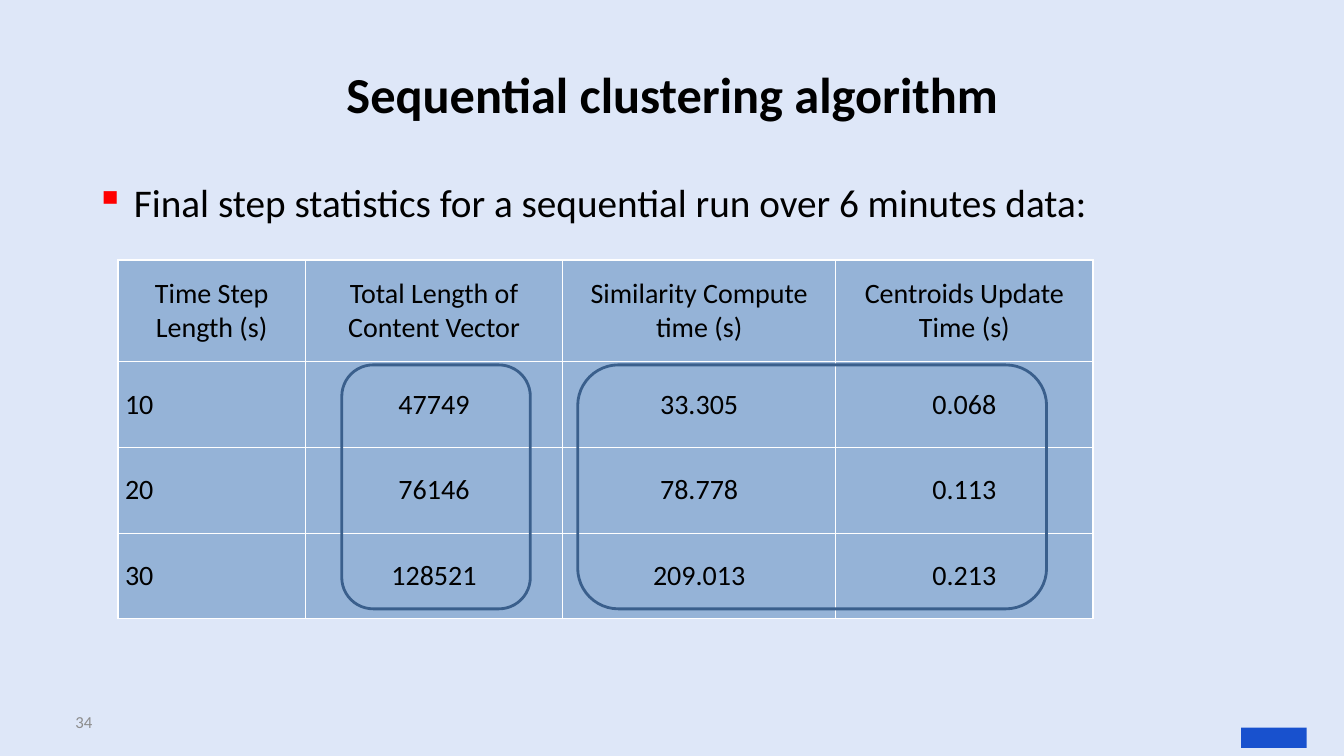
"""Build the slide with the statistics of the sequential clustering algorithm."""
from lxml import etree
from pptx import Presentation
from pptx.dml.color import RGBColor
from pptx.enum.shapes import MSO_SHAPE
from pptx.enum.text import MSO_ANCHOR, PP_ALIGN
from pptx.oxml.ns import qn
from pptx.util import Emu, Pt

CENTER, LEFT, JUSTIFY = PP_ALIGN.CENTER, PP_ALIGN.LEFT, PP_ALIGN.JUSTIFY
TOP, MIDDLE = MSO_ANCHOR.TOP, MSO_ANCHOR.MIDDLE
RECTANGLE, ROUNDED = MSO_SHAPE.RECTANGLE, MSO_SHAPE.ROUNDED_RECTANGLE
PX = 9144

THEME = {
    "font": "Calibri",
    "background": "DEE7F8", "ink": "000000", "muted": "8C8C8C",
    "bullet": "FF0000", "cell": "95B3D7", "grid": "FFFFFF",
    "highlight": "3A5F8C", "mark": "1851CE",
    "title_size": 36, "body_size": 28, "table_size": 20, "number_size": 12,
    "grid_width": 1, "highlight_width": 2,
}


def px(*lengths):
    return [Emu(length * PX) for length in lengths]


def write(frame, text, size, color="ink", align=LEFT, bold=False):
    paragraph = frame.paragraphs[0]
    paragraph.alignment = align
    run = paragraph.add_run()
    run.text = text
    font_format = {"name": THEME["font"], "size": Pt(THEME[size]), "bold": bold}
    for attribute, value in font_format.items():
        setattr(run.font, attribute, value)
    run.font.color.rgb = RGBColor.from_string(THEME[color])
    return paragraph


presentation = Presentation()
presentation.slide_width, presentation.slide_height = px(1333, 750)
slide = presentation.slides.add_slide(presentation.slide_layouts[6])
slide.background.fill.solid()
slide.background.fill.fore_color.rgb = RGBColor.from_string(THEME["background"])

corner_mark = slide.shapes.add_shape(RECTANGLE, *px(1231, 722, 65, 20))
corner_mark.shadow.inherit = False
corner_mark.fill.solid()
corner_mark.fill.fore_color.rgb = RGBColor.from_string(THEME["mark"])
corner_mark.line.fill.background()

TEXTS = [
    ((67, 30, 1200, 125), MIDDLE, "Sequential clustering algorithm",
     {"size": "title_size", "align": CENTER, "bold": True}),
    ((65, 696, 311, 40), MIDDLE, "34", {"size": "number_size", "color": "muted"}),
    ((85, 172, 1150, 65), TOP,
     "Final step statistics for a sequential run over 6 minutes data:",
     {"size": "body_size"}),
]
for place, anchor, text, text_format in TEXTS:
    frame = slide.shapes.add_textbox(*px(*place)).text_frame
    frame.word_wrap = True
    frame.vertical_anchor = anchor
    statement = write(frame, text, **text_format)

statement.space_after = Pt(6)
bullet_properties = statement._p.get_or_add_pPr()
bullet_properties.set("marL", str(38 * PX))
bullet_properties.set("indent", str(-38 * PX))
bullet_color = etree.SubElement(bullet_properties, qn("a:buClr"))
etree.SubElement(bullet_color, qn("a:srgbClr"), val=THEME["bullet"])
etree.SubElement(bullet_properties, qn("a:buChar"), char="▪")

STATISTICS = [
    ("Time Step Length (s)", "Total Length of Content Vector",
     "Similarity Compute time (s)", "Centroids Update Time (s)"),
    ("10", "47749", "33.305", "0.068"),
    ("20", "76146", "78.778", "0.113"),
    ("30", "128521", "209.013", "0.213"),
]
COLUMN_WIDTHS = (186, 255, 271, 255)
ROW_HEIGHTS = (101, 85, 85, 85)

statistics_table = slide.shapes.add_table(
    len(ROW_HEIGHTS), len(COLUMN_WIDTHS),
    *px(117, 258, sum(COLUMN_WIDTHS), sum(ROW_HEIGHTS))).table
for column, width in zip(statistics_table.columns, px(*COLUMN_WIDTHS)):
    column.width = width
for row, height in zip(statistics_table.rows, px(*ROW_HEIGHTS)):
    row.height = height

cell_format = {"vertical_anchor": MIDDLE, "margin_left": Emu(7 * PX),
               "margin_right": Emu(7 * PX), "margin_top": 0, "margin_bottom": 0}
for row_index, values in enumerate(STATISTICS):
    for column_index, value in enumerate(values):
        cell = statistics_table.cell(row_index, column_index)
        for attribute, setting in cell_format.items():
            setattr(cell, attribute, setting)
        is_time_step = row_index > 0 and column_index == 0
        write(cell.text_frame, value, "table_size",
              align=JUSTIFY if is_time_step else CENTER)
        cell_properties = cell._tc.get_or_add_tcPr()
        for side in ("a:lnL", "a:lnR", "a:lnT", "a:lnB"):
            border = etree.SubElement(cell_properties, qn(side),
                                      w=str(Pt(THEME["grid_width"])))
            border_fill = etree.SubElement(border, qn("a:solidFill"))
            etree.SubElement(border_fill, qn("a:srgbClr"), val=THEME["grid"])
        cell.fill.solid()
        cell.fill.fore_color.rgb = RGBColor.from_string(THEME["cell"])

for left, width in ((573, 465), (339, 187)):
    highlight = slide.shapes.add_shape(ROUNDED, *px(left, 362, width, 242))
    highlight.shadow.inherit = False
    highlight.fill.background()
    highlight.line.color.rgb = RGBColor.from_string(THEME["highlight"])
    highlight.line.width = Pt(THEME["highlight_width"])

presentation.save("out.pptx")
